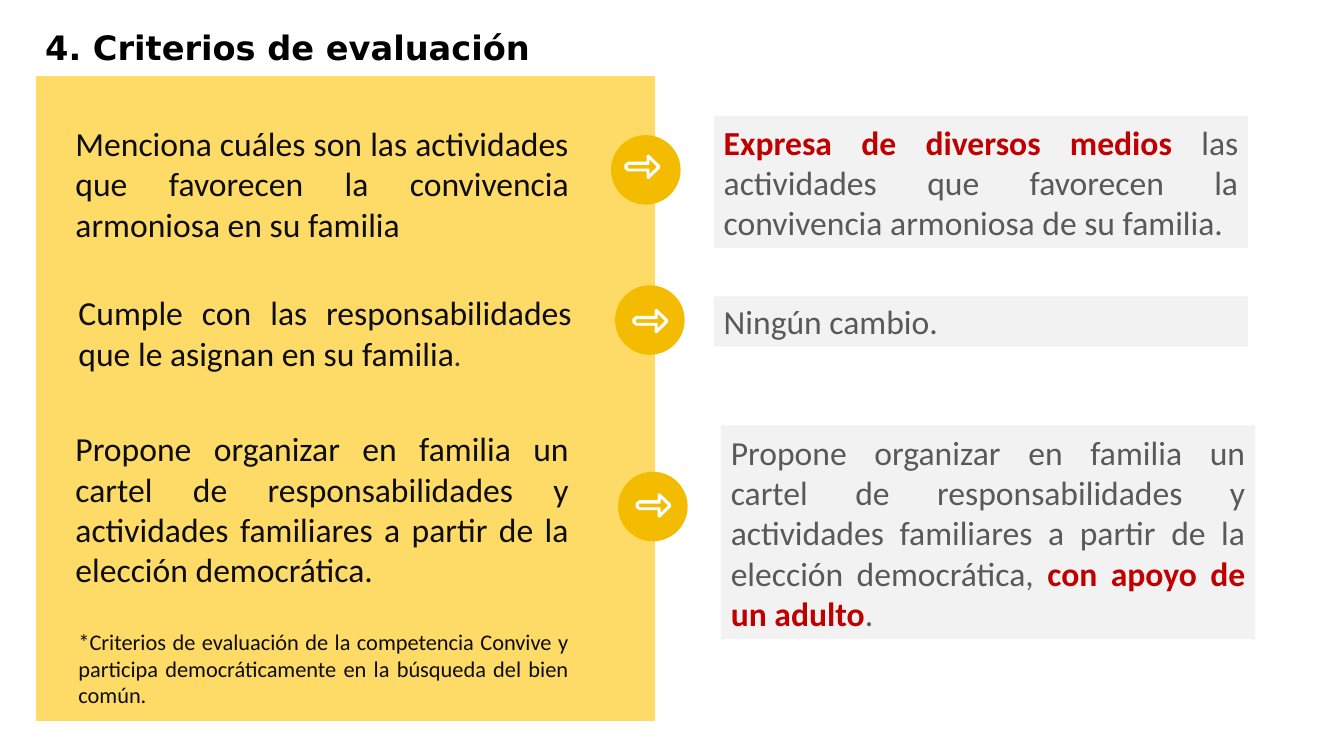
from pptx import Presentation
from pptx.dml.color import RGBColor
from pptx.enum.shapes import MSO_SHAPE
from pptx.enum.text import MSO_ANCHOR, PP_ALIGN
from pptx.util import Inches, Pt

WHITE = RGBColor(0xFF, 0xFF, 0xFF)
BLACK = RGBColor(0, 0, 0)
INK = RGBColor(0x0D, 0x0D, 0x0D)
DARK = RGBColor(0x33, 0x33, 0x33)
GRAY = RGBColor(0x59, 0x59, 0x59)
RED = RGBColor(0xC0, 0, 0)
PALE = RGBColor(0xF2, 0xF2, 0xF2)
YELLOW = RGBColor(0xFE, 0xDA, 0x66)
GOLD = RGBColor(0xF4, 0xBC, 0x01)

BASE = {"name": "Calibri", "size": Pt(24), "bold": False}
PLAIN = {"color": INK}
SOFT = {"color": GRAY}
STRONG = {"color": RED, "bold": True}
STOP = {"color": DARK, "bold": True, "size": Pt(18)}
NOTE = {"color": INK, "size": Pt(16)}
TITLE = {"color": BLACK, "bold": True, "name": "DejaVu Sans"}

# Arrow contours, in thousandths of an inch
OUTER = [(0, 95), (30, 70), (220, 70), (220, 8), (232, 0), (340, 105),
         (340, 125), (232, 230), (220, 222), (220, 155), (30, 155), (0, 130)]
INNER = [(20, 105), (30, 90), (235, 90), (235, 25), (325, 115),
         (235, 205), (235, 140), (30, 140), (20, 125)]

# Each row: criterion box and runs, badge corner, arrow corner, change box and runs
ROWS = [
    ((0.65, 1.17, 5.09, 1.32),
     [("Menciona cuáles son las actividades que favorecen la convivencia "
       "armoniosa en su familia", PLAIN)],
     (6.06, 1.34), (6.2, 1.54), (7.08, 1.15, 5.3, 1.31),
     [("Expresa de diversos medios ", STRONG),
      ("las actividades que favorecen la convivencia armoniosa "
       "de su familia.", SOFT)]),
    ((0.68, 2.85, 5.09, 0.9),
     [("Cumple con las responsabilidades que le asignan en su familia", PLAIN),
      (".", STOP)],
     (6.1, 2.83), (6.28, 3.07), (7.08, 2.94, 5.3, 0.5),
     [("Ningún cambio.", SOFT)]),
    ((0.65, 4.2, 5.09, 1.65),
     [("Propone organizar en familia un cartel de responsabilidades y "
       "actividades familiares a partir de la elección democrática.", PLAIN)],
     (6.13, 4.68), (6.31, 4.9), (7.15, 4.22, 5.3, 2.12),
     [("Propone organizar en familia un cartel de responsabilidades y "
       "actividades familiares a partir de la elección democrática, ", SOFT),
      ("con apoyo de un adulto", STRONG), (".", SOFT)]),
]


def paint(shape, fill, line=None):
    shape.shadow.inherit = False
    shape.fill.solid()
    shape.fill.fore_color.rgb = fill
    if line is None:
        shape.line.fill.background()
    else:
        shape.line.color.rgb = line
        shape.line.width = Pt(1)


def write(shape, runs, align=PP_ALIGN.JUSTIFY, anchor=MSO_ANCHOR.TOP):
    frame = shape.text_frame
    frame.word_wrap = True
    frame.vertical_anchor = anchor
    para = frame.paragraphs[0]
    para.alignment = align
    for text, style in runs:
        run = para.add_run()
        run.text = text
        for key, value in {**BASE, **style}.items():
            if key == "color":
                run.font.color.rgb = value
            else:
                setattr(run.font, key, value)
    return para


def add_text(slide, box, runs, **options):
    return write(slide.shapes.add_textbox(*map(Inches, box)), runs, **options)


def add_block(slide, kind, box, fill, line=None):
    shape = slide.shapes.add_shape(kind, *map(Inches, box))
    paint(shape, fill, line)
    return shape


def add_arrow(slide, spot):
    """Draw a hollow arrow whose bounds start at spot."""
    pen = slide.shapes.build_freeform(*OUTER[0], scale=Inches(0.001))
    pen.add_line_segments(OUTER[1:], close=True)
    pen.move_to(*INNER[0])
    pen.add_line_segments(INNER[1:], close=True)
    paint(pen.convert_to_shape(*map(Inches, spot)), WHITE, WHITE)


def add_row(slide, left, runs, badge, arrow, right, change):
    add_text(slide, left, runs)
    card = add_block(slide, MSO_SHAPE.RECTANGLE, right, PALE)
    write(card, change, anchor=MSO_ANCHOR.MIDDLE)
    add_block(slide, MSO_SHAPE.OVAL, (*badge, 0.69, 0.69), GOLD)
    add_arrow(slide, arrow)


def main():
    deck = Presentation()
    deck.slide_width = Inches(13.33)
    deck.slide_height = Inches(7.5)
    slide = deck.slides.add_slide(deck.slide_layouts[6])
    add_block(slide, MSO_SHAPE.RECTANGLE, (0.35, 0.75, 6.15, 6.41), YELLOW, WHITE)
    title = add_text(slide, (0.35, 0.26, 5.26, 0.49),
                     [("4. Criterios de evaluación", TITLE)], align=PP_ALIGN.LEFT)
    title.line_spacing = 0.9
    for row in ROWS:
        add_row(slide, *row)
    add_text(slide, (0.68, 6.18, 5.06, 0.9),
             [("*Criterios de evaluación de la competencia Convive y participa "
               "democráticamente en la búsqueda del bien común.", NOTE)])
    deck.save("out.pptx")


if __name__ == "__main__":
    main()
